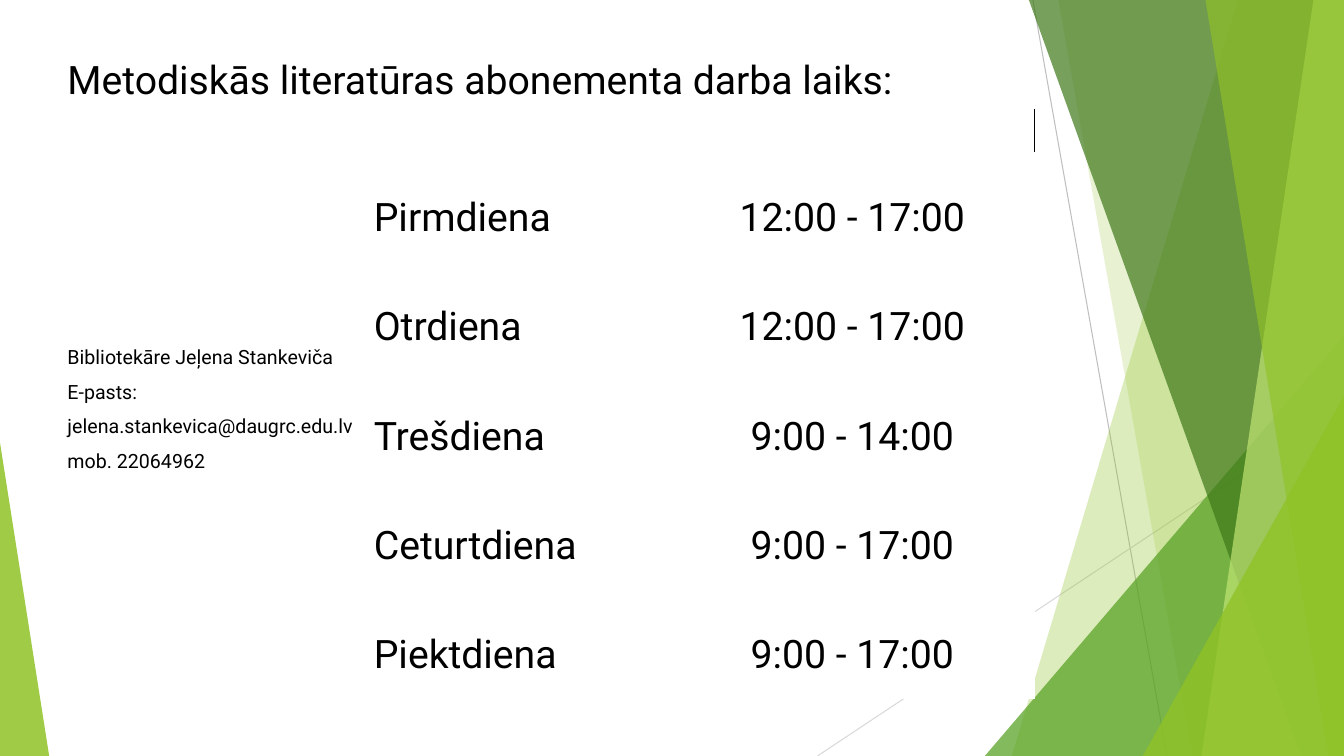
import pptx
import pptx.util
import pptx.dml.color
import pptx.enum.shapes
import pptx.enum.text
import lxml.etree
from dataclasses import dataclass

Cm = pptx.util.Cm
Pt = pptx.util.Pt
RGB = pptx.dml.color.RGBColor.from_string
Align = pptx.enum.text.PP_ALIGN


@dataclass(frozen=True)
class Theme:
    """Colours, font and type sizes of the slide."""
    font: str = "Roboto"
    large: int = 28
    small: int = 14
    ink: str = "000000"
    paper: str = "FFFFFF"
    lime: str = "90C226"
    leaf: str = "54A021"
    moss: str = "3F7819"
    pale: str = "C0E474"
    grey: str = "BFBFBF"
    mist: str = "D9D9D9"


theme = Theme()

TITLE = "Metodiskās literatūras abonementa darba laiks:"
CONTACT = "\v".join([
    "Bibliotekāre Jeļena Stankeviča",
    "E-pasts:",
    "jelena.stankevica@daugrc.edu.lv",
    "mob. 22064962",
])
HOURS = [
    ("Pirmdiena", "12:00 - 17:00"),
    ("Otrdiena", "12:00 - 17:00"),
    ("Trešdiena", "9:00 - 14:00"),
    ("Ceturtdiena", "9:00 - 17:00"),
    ("Piektdiena", "9:00 - 17:00"),
]


def child(parent, tag, **attrs):
    """Append a drawing element to the parent."""
    node = lxml.etree.SubElement(parent, pptx.oxml.ns.qn(tag))
    for name, value in attrs.items():
        node.set(name, str(value))
    return node


def tint(shape, color, alpha):
    """Fill a shape with a see-through colour and no line."""
    shape.shadow.inherit = False
    shape.line.fill.background()
    shape.fill.solid()
    shape.fill.fore_color.rgb = RGB(color)
    mark = shape.fill._xPr.find(".//" + pptx.oxml.ns.qn("a:srgbClr"))
    child(mark, "a:alpha", val=alpha * 1000)


def stroke(slide, start, end, color):
    """Draw a thin straight line."""
    kind = pptx.enum.shapes.MSO_CONNECTOR.STRAIGHT
    line = slide.shapes.add_connector(kind, *start, *end)
    line.line.color.rgb = RGB(color)
    line.line.width = Pt(0.75)
    child(line._element.spPr, "a:effectLst")


def facet(slide, box, top, foot, color, alpha):
    """Fill the box to the right of a slanted edge."""
    x, y, w, h = box
    form = slide.shapes.build_freeform(x + Cm(top), y)
    form.add_line_segments([(x + w, y), (x + w, y + h), (x + Cm(foot), y + h)])
    tint(form.convert_to_shape(), color, alpha)


def wedge(slide, box, lean, color, alpha):
    """Fill the box with a triangle whose tip is at lean."""
    kind = pptx.enum.shapes.MSO_SHAPE.ISOSCELES_TRIANGLE
    shape = slide.shapes.add_shape(kind, *box)
    shape.adjustments[0] = lean
    tint(shape, color, alpha)


def corner(slide, box, wide, high, color, alpha):
    """Place a triangle in the lower right corner of the box."""
    x, y, w, h = box
    wide, high = Cm(wide), Cm(high)
    wedge(slide, (x + w - wide, y + h - high, wide, high), 1, color, alpha)


def panel(slide, box):
    """Build the overlapping green panes at the right."""
    x, y, w, h = box
    stroke(slide, (x + Cm(5.43), y), (x + Cm(8.81), y + h), theme.grey)
    stroke(slide, (x + w, y + Cm(10.24)), (x, y + h), theme.mist)
    panes = [
        (facet, 10.59, 4.9, theme.lime, 30),
        (facet, 6.07, 9.45, theme.lime, 20),
        (corner, 9.05, 10.59, theme.leaf, 72),
        (facet, 5.33, 12.19, theme.moss, 70),
        (facet, 12.5, 9.68, theme.pale, 70),
        (facet, 9.78, 12.88, theme.lime, 65),
        (corner, 5.07, 9.07, theme.lime, 80),
    ]
    for draw, *look in panes:
        draw(slide, box, *look)


def edge(cell, right):
    """Set white cell borders with a chosen right border."""
    props = cell._tc.get_or_add_tcPr()
    sides = {"L": theme.paper, "R": right, "T": theme.paper, "B": theme.paper}
    for side, color in sides.items():
        width = Pt(0.75) if color == theme.ink else Pt(1.2)
        line = child(props, "a:ln" + side, w=int(width))
        child(child(line, "a:solidFill"), "a:srgbClr", val=color)


def write(cell, text, size, align=Align.LEFT, space=1.5):
    """Put formatted text in a cell."""
    para = cell.text_frame.paragraphs[0]
    para.text = text
    para.alignment = align
    para.line_spacing = space
    para.font.name = theme.font
    para.font.size = Pt(size)
    para.font.color.rgb = RGB(theme.ink)


def hours(slide, box):
    """Build the table of opening hours."""
    table = slide.shapes.add_table(len(HOURS) + 2, 3, *box).table
    table.first_row = table.horz_banding = False
    for col, width in zip(table.columns, (7.72, 7.62, 9.17)):
        col.width = Cm(width)
    for row, height in zip(table.rows, [1.47, 1.07] + [2.75] * len(HOURS)):
        row.height = Cm(height)

    bare = [table.cell(1, 1), table.cell(1, 2)]
    for cell in table.iter_cells():
        cell.margin_left = cell.margin_right = Cm(0.15)
        cell.margin_top = cell.margin_bottom = Cm(0.08)
        cell.vertical_anchor = pptx.enum.text.MSO_ANCHOR.MIDDLE
        edge(cell, theme.ink if cell == bare[1] else theme.paper)
        if cell in bare:
            cell.fill.background()
        else:
            cell.fill.solid()
            cell.fill.fore_color.rgb = RGB(theme.paper)

    table.cell(0, 0).merge(table.cell(0, 2))
    table.cell(1, 0).merge(table.cell(len(HOURS) + 1, 0))
    write(table.cell(0, 0), TITLE, theme.large, space=1)
    write(table.cell(1, 0), CONTACT, theme.small)
    for row, (day, time) in enumerate(HOURS, 2):
        write(table.cell(row, 1), day, theme.large)
        write(table.cell(row, 2), time, theme.large, Align.CENTER)


def main():
    """Build and save the slide."""
    deck = pptx.Presentation()
    deck.slide_width, deck.slide_height = Cm(33.87), Cm(19.05)
    slide = deck.slides.add_slide(deck.slide_layouts[6])
    panel(slide, (Cm(20.6), 0, Cm(13.27), Cm(19.05)))
    wedge(slide, (0, Cm(11.15), Cm(1.24), Cm(7.9)), 0, theme.lime, 85)
    hours(slide, (Cm(1.55), Cm(1.3), Cm(24.51), Cm(16.29)))
    deck.save("out.pptx")


if __name__ == "__main__":
    main()
